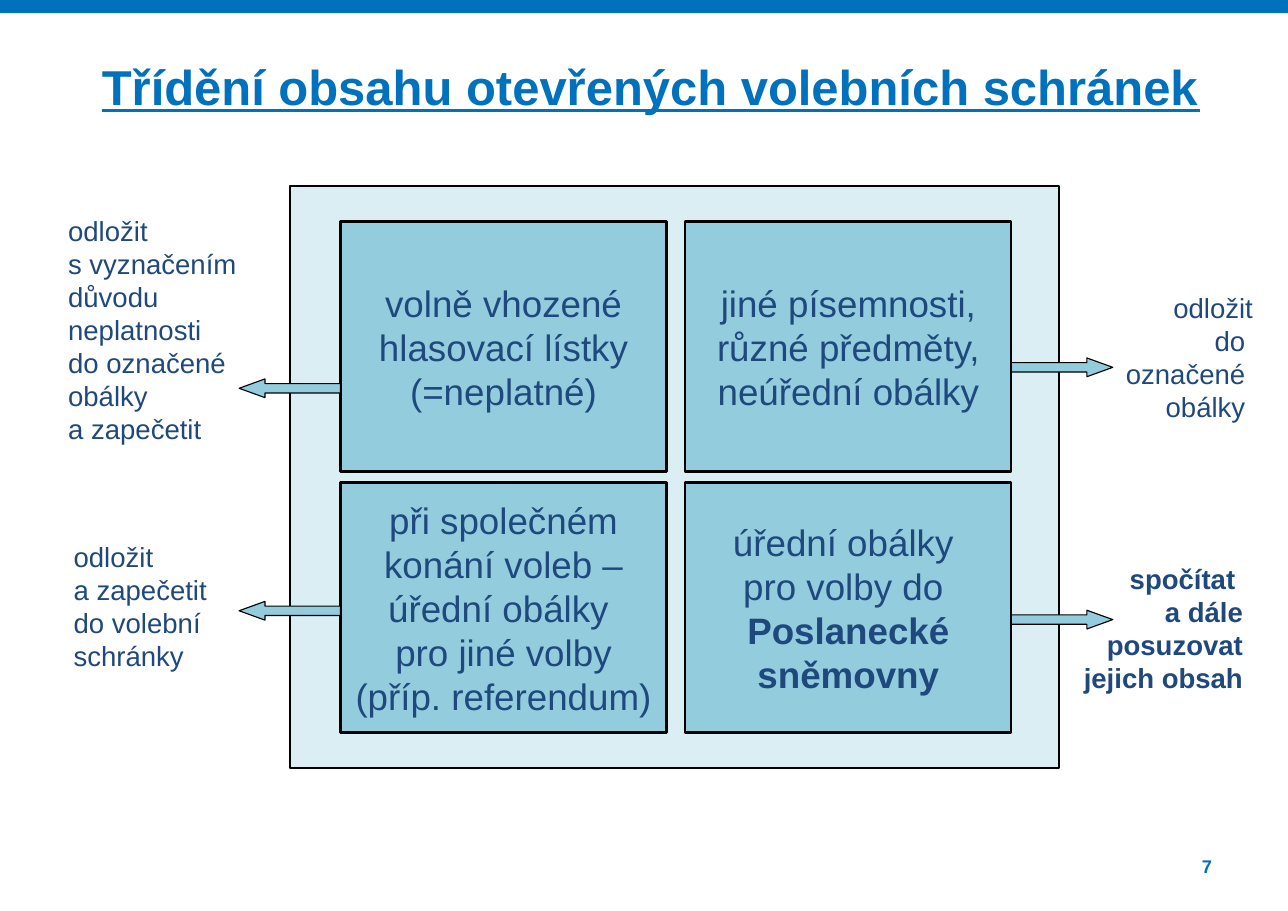
import lxml.etree
import pptx
import pptx.dml.color
import pptx.enum.shapes
import pptx.enum.text
import pptx.oxml.ns
import pptx.util

Inches = pptx.util.Inches
Pt = pptx.util.Pt
SHAPE = pptx.enum.shapes.MSO_SHAPE
ALIGN = pptx.enum.text.PP_ALIGN
ANCHOR = pptx.enum.text.MSO_ANCHOR
FIT = pptx.enum.text.MSO_AUTO_SIZE

BLUE, NAVY, BLACK = "0071BC", "1F497D", "000000"
PALE, AQUA = "B7DEE8", "93CDDD"

# Cells row by row: column, row, spans of (text, bold), arrow offset below cell top
CELLS = [
    (0, 0, [("volně vhozené hlasovací lístky (=neplatné)", False)], 1.43),
    (1, 0, [("jiné písemnosti, různé předměty, neúřední obálky", False)], 1.24),
    (0, 1, [("při společném konání voleb – úřední obálky \n"
             "pro jiné volby\n(příp. referendum) ", False)], 1.08),
    (1, 1, [("úřední obálky \npro volby do \n", False),
            ("Poslanecké sněmovny", True)], 1.16),
]

# Notes: box, text, alignment, bold
NOTES = [
    ((0.52, 1.89, 1.83, 2.22),
     "odložit\ns vyznačením\ndůvodu\nneplatnosti \ndo označené\nobálky\na zapečetit",
     ALIGN.LEFT, False),
    ((9.66, 2.59, 1.81, 1.31), "odložit\ndo \noznačené \nobálky ", ALIGN.RIGHT, False),
    ((0.57, 4.85, 1.5, 1.31), "odložit\na zapečetit do volební schránky",
     ALIGN.LEFT, False),
    ((9.71, 5.05, 1.67, 1.31), "spočítat \na dále posuzovat jejich obsah",
     ALIGN.RIGHT, True),
]


def color(value):
    return pptx.dml.color.RGBColor.from_string(value)


def set_all(target, values):
    for name, value in values.items():
        setattr(target, name, value)


def write(shape, spans, align, size, ink, frame_format, underline=None):
    """Fill one paragraph with (text, bold) spans, turning newlines into line breaks."""
    frame = shape.text_frame
    set_all(frame, {"word_wrap": True, **frame_format})
    para = frame.paragraphs[0]
    para.alignment = align
    for text, bold in spans:
        for index, line in enumerate(text.split("\n")):
            if index:
                para.add_line_break()
            if line:
                span = para.add_run()
                span.text = line
                set_all(span.font, {"name": "Arial", "size": Pt(size),
                                    "bold": bold, "underline": underline})
                span.font.color.rgb = color(ink)


def add_text(page, box, spans, align, size, ink, frame_format, underline=None):
    shape = page.shapes.add_textbox(*map(Inches, box))
    write(shape, spans, align, size, ink, frame_format, underline)


def add_block(page, kind, box, fill, line_width=None, opacity=None):
    shape = page.shapes.add_shape(kind, *map(Inches, box))
    shape.shadow.inherit = False
    shape.fill.solid()
    shape.fill.fore_color.rgb = color(fill)
    if opacity is not None:
        tint = shape.fill._xPr.find(".//" + pptx.oxml.ns.qn("a:srgbClr"))
        alpha = lxml.etree.SubElement(tint, pptx.oxml.ns.qn("a:alpha"))
        alpha.set("val", str(opacity * 1000))
    if line_width is None:
        shape.line.fill.background()
    else:
        shape.line.color.rgb = color(BLACK)
        shape.line.width = Pt(line_width)
    return shape


def add_frame(page, box):
    """Top band, title and page number."""
    left, top, width, height = box
    flush = dict.fromkeys(
        ("margin_left", "margin_top", "margin_right", "margin_bottom"), 0)
    add_block(page, SHAPE.RECTANGLE, (left, top, width, 0.12), BLUE)
    add_text(page, (left + 0.81, top + 0.51, 10.08, 0.57),
             [("Třídění obsahu otevřených volebních schránek", True)],
             ALIGN.RIGHT, 32, BLUE, flush, True)
    add_text(page, (left + 10.22, top + height - 0.51, 0.78, 0.21),
             [("7", True)], ALIGN.RIGHT, 12, BLUE, flush)


def add_sorting_grid(page, box):
    """Pale panel with four cells, each with an arrow pointing outwards."""
    left, top = box[:2]
    cell_width, cell_height = 2.96, 2.27
    arrow_width, arrow_height = 0.92, 0.17
    add_block(page, SHAPE.RECTANGLE, box, PALE, 1.5, 50)
    for column, row, spans, arrow_drop in CELLS:
        x = left + 0.46 + column * 3.13
        y = top + 0.32 + row * 2.37
        cell = add_block(page, SHAPE.RECTANGLE, (x, y, cell_width, cell_height),
                         AQUA, 1.5)
        write(cell, spans, ALIGN.CENTER, 24, NAVY,
              {"vertical_anchor": ANCHOR.MIDDLE})
        kind = SHAPE.RIGHT_ARROW if column else SHAPE.LEFT_ARROW
        arrow_x = x + cell_width if column else x - arrow_width
        arrow = add_block(page, kind,
                          (arrow_x, y + arrow_drop, arrow_width, arrow_height),
                          AQUA, 0.75)
        arrow.adjustments[0] = 0.5
        arrow.adjustments[1] = 1.38


def add_notes(page):
    for box, text, align, bold in NOTES:
        add_text(page, box, [(text, bold)], align, 18, NAVY,
                 {"auto_size": FIT.SHAPE_TO_FIT_TEXT})


def main():
    deck = pptx.Presentation()
    width, height = 11.69, 8.27
    set_all(deck, {"slide_width": Inches(width), "slide_height": Inches(height)})
    page = deck.slides.add_slide(deck.slide_layouts[6])
    add_frame(page, (0, 0, width, height))
    add_sorting_grid(page, (2.63, 1.69, 6.98, 5.28))
    add_notes(page)
    deck.save("out.pptx")


if __name__ == "__main__":
    main()
